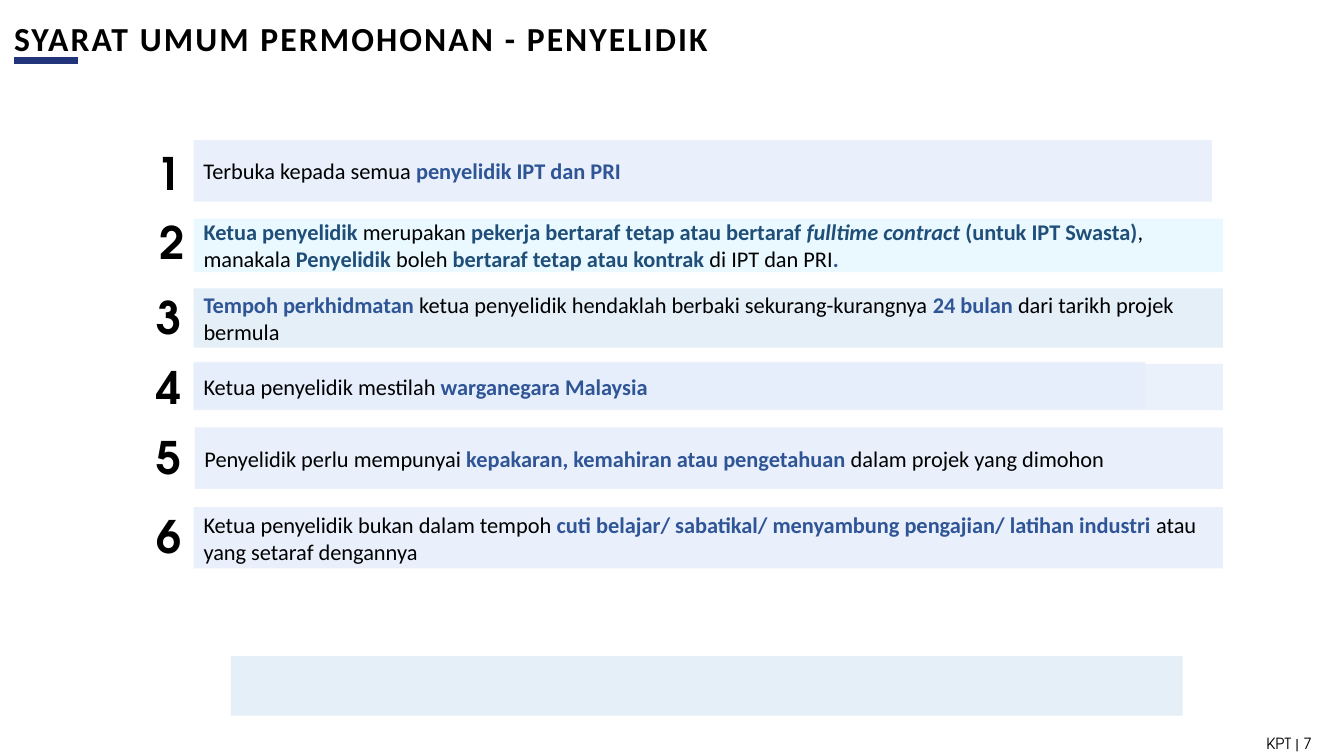
from pptx import Presentation
from pptx.dml.color import RGBColor
from pptx.enum.shapes import MSO_CONNECTOR, MSO_SHAPE
from pptx.enum.text import MSO_ANCHOR, MSO_AUTO_SIZE, PP_ALIGN
from pptx.oxml.ns import qn
from pptx.util import Inches, Pt
from lxml.etree import SubElement

COLORS = {
    "black": "000000",
    "blue": "2F5597",
    "navy": "1F4E79",
    "underline": "22357B",
    "lavender": "E5EEFB",
    "cyan": "E5F8FF",
    "ice": "DEEBF7",
}
BODY_FONT = "Calibri"
NUMBER_FONT = "TeX Gyre Adventor"
TITLE = "SYARAT UMUM PERMOHONAN - PENYELIDIK"
FOOTER = "KPT | 7"

PLAIN_BARS = [
    ((1.92, 3.59, 9.44, 0.46), "lavender", 80),
    ((2.29, 6.51, 9.44, 0.59), "ice", 80),
]
CONDITIONS = [
    {
        "bar": (1.92, 1.39, 10.1, 0.61), "fill": "lavender", "opacity": 83,
        "number": (1.45, 1.4, 0.39),
        "runs": [("Terbuka kepada semua ", "black"), ("penyelidik IPT dan PRI", "blue")],
    },
    {
        "bar": (1.92, 2.17, 10.21, 0.53), "fill": "cyan", "opacity": 80,
        "number": (1.48, 2.08, 0.34),
        "runs": [
            ("Ketua penyelidik ", "navy"),
            ("merupakan ", "black"),
            ("pekerja bertaraf tetap atau bertaraf ", "navy"),
            ("fulltime contract ", "navy", True),
            ("(untuk IPT Swasta)", "navy"),
            (", manakala ", "black"),
            ("Penyelidik ", "navy"),
            ("boleh ", "black"),
            ("bertaraf tetap atau kontrak ", "navy"),
            ("di IPT dan PRI", "black"),
            (".", "blue"),
        ],
    },
    {
        "bar": (1.92, 2.86, 10.21, 0.59), "fill": "ice", "opacity": 80,
        "number": (1.45, 2.83, 0.39),
        "runs": [
            ("Tempoh perkhidmatan ", "blue"),
            ("ketua penyelidik hendaklah berbaki sekurang-kurangnya ", "black"),
            ("24 bulan ", "blue"),
            ("dari tarikh projek bermula", "black"),
        ],
    },
    {
        "bar": (1.92, 3.61, 10.21, 0.46), "fill": "lavender", "opacity": 80,
        "number": (1.45, 3.52, 0.37),
        "runs": [("Ketua penyelidik mestilah ", "black"), ("warganegara Malaysia", "blue")],
    },
    {
        "bar": (1.93, 4.24, 10.2, 0.61), "fill": "lavender", "opacity": 83,
        "number": (1.45, 4.21, 0.37),
        "runs": [
            ("Penyelidik perlu mempunyai ", "black"),
            ("kepakaran, kemahiran atau pengetahuan ", "blue"),
            ("dalam projek yang dimohon", "black"),
        ],
    },
    {
        "bar": (1.92, 5.03, 10.21, 0.61), "fill": "lavender", "opacity": 83,
        "number": (1.45, 5, 0.37),
        "runs": [
            ("Ketua penyelidik bukan dalam tempoh ", "black"),
            ("cuti belajar/ sabatikal/ menyambung pengajian/ latihan industri ", "blue"),
            ("atau yang setaraf dengannya", "black"),
        ],
    },
]


def color(name):
    return RGBColor.from_string(COLORS[name])


def add_bar(slide, box, fill, opacity):
    bar = slide.shapes.add_shape(MSO_SHAPE.RECTANGLE, *map(Inches, box))
    bar.shadow.inherit = False
    bar.line.fill.background()
    bar.fill.solid()
    bar.fill.fore_color.rgb = color(fill)
    tint = bar.fill._xPr.find(qn("a:solidFill"))[0]
    SubElement(tint, qn("a:alpha")).set("val", str(opacity * 1000))
    return bar


def add_condition(slide, condition):
    bar = add_bar(slide, condition["bar"], condition["fill"], condition["opacity"])
    frame = bar.text_frame
    frame.word_wrap = True
    frame.vertical_anchor = MSO_ANCHOR.MIDDLE
    paragraph = frame.paragraphs[0]
    paragraph.alignment = PP_ALIGN.LEFT
    paragraph.font.size = Pt(16)
    paragraph.font.name = BODY_FONT
    for text, tone, *italic in condition["runs"]:
        run = paragraph.add_run()
        run.text = text
        run.font.color.rgb = color(tone)
        run.font.bold = tone != "black"
        run.font.italic = bool(italic)


def add_label(slide, box, text, font, size, alignment, bold):
    label = slide.shapes.add_textbox(*map(Inches, box))
    frame = label.text_frame
    frame.word_wrap = True
    paragraph = frame.paragraphs[0]
    paragraph.text = text
    paragraph.alignment = alignment
    paragraph.font.name = font
    paragraph.font.size = Pt(size)
    paragraph.font.bold = bold
    paragraph.font.color.rgb = color("black")
    return frame


def add_header(slide):
    frame = add_label(slide, (0.14, 0.15, 8.61, 0.46), TITLE, BODY_FONT, 24, PP_ALIGN.LEFT, True)
    frame.vertical_anchor = MSO_ANCHOR.MIDDLE
    frame.margin_left = frame.margin_right = 0
    frame.paragraphs[0].runs[0].font._element.set("spc", "150")
    underline = slide.shapes.add_connector(
        MSO_CONNECTOR.STRAIGHT, Inches(0.14), Inches(0.6), Inches(0.77), Inches(0.6))
    underline.line.color.rgb = color("underline")
    underline.line.width = Pt(4.5)
    SubElement(underline._element.spPr, qn("a:effectLst"))


def main():
    presentation = Presentation()
    presentation.slide_width = Inches(13.33)
    presentation.slide_height = Inches(7.5)
    slide = presentation.slides.add_slide(presentation.slide_layouts[6])
    add_header(slide)
    footer = add_label(
        slide, (9.94, 7.22, 3.17, 0.3), FOOTER, NUMBER_FONT, 11, PP_ALIGN.RIGHT, False)
    footer.vertical_anchor = MSO_ANCHOR.MIDDLE
    for box, fill, opacity in PLAIN_BARS:
        add_bar(slide, box, fill, opacity)
    for number, condition in enumerate(CONDITIONS, 1):
        add_condition(slide, condition)
        frame = add_label(
            slide, (*condition["number"], 0.64), str(number), NUMBER_FONT, 32,
            PP_ALIGN.CENTER, True)
        frame.auto_size = MSO_AUTO_SIZE.SHAPE_TO_FIT_TEXT
    presentation.save("out.pptx")


if __name__ == "__main__":
    main()
